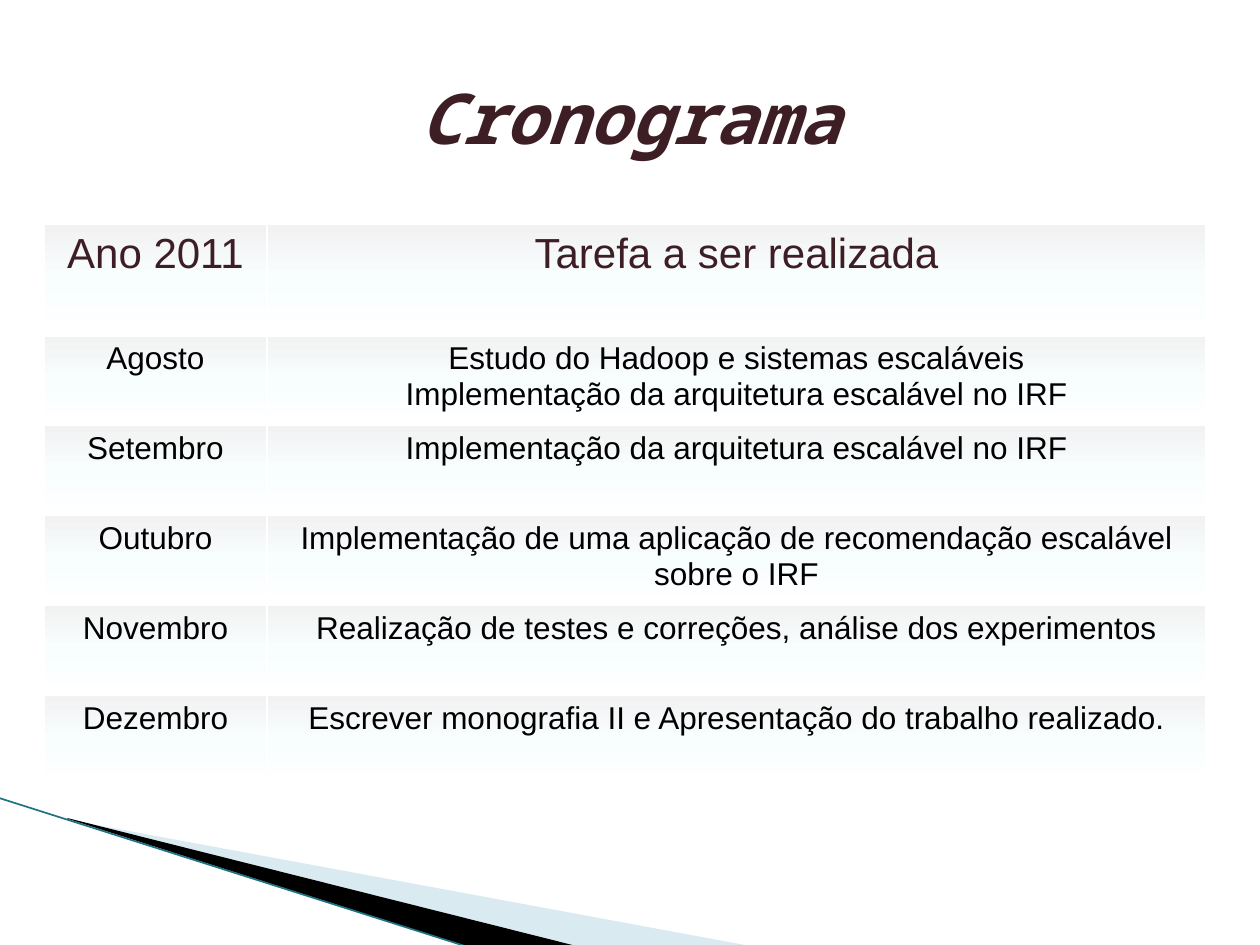
from lxml import etree
from pptx import Presentation
from pptx import util as u
from pptx.dml.color import RGBColor
from pptx.enum import shapes, text
from pptx.oxml import parse_xml
from pptx.oxml.ns import nsdecls, qn

PX = 914400 / 126
BLACK = RGBColor(0x00, 0x00, 0x00)
PLUM = RGBColor(0x3E, 0x1E, 0x25)
PALE_BLUE = RGBColor(0xA0, 0xCB, 0xDC)
TEAL = RGBColor(0x1F, 0x71, 0x86)
WHITE = RGBColor(0xFF, 0xFF, 0xFF)
CELL_STOPS = [
    (0, RGBColor(0xF2, 0xF2, 0xF2)),
    (50, RGBColor(0xF8, 0xFD, 0xFE)),
    (100, WHITE),
]


def px(*lengths):
    return [round(length * PX) for length in lengths]


def write(paragraph, content, **font_format):
    paragraph.alignment = text.PP_ALIGN.CENTER
    run = paragraph.add_run()
    run.text = content
    run.font.color.rgb = font_format.pop("color")
    for name, value in font_format.items():
        setattr(run.font, name, value)


prs = Presentation()
prs.slide_width, prs.slide_height = px(1260, 945)
slide = prs.slides.add_slide(prs.slide_layouts[5])

# Corner wedges: each outline reaches beyond its frame
wedges = [
    ([(69, 820), (750, 946), (575, 946), (69, 819)],
     (98, 689, 524, 199), PALE_BLUE),
    ([(67, 818), (576, 946), (469, 947), (68, 819)],
     (-8, 798, 524, 116), BLACK),
]
for points, frame, color in wedges:
    builder = slide.shapes.build_freeform(*points[0], scale=PX)
    builder.add_line_segments(points[1:], close=True)
    wedge = builder.convert_to_shape()
    wedge.left, wedge.top, wedge.width, wedge.height = px(*frame)
    outline = wedge._element.spPr.find(".//" + qn("a:path"))
    outline.set("w", str(frame[2]))
    outline.set("h", str(frame[3]))
    for point, (x, y) in zip(outline.iter(qn("a:pt")), points):
        point.set("x", str(x - frame[0]))
        point.set("y", str(y - frame[1]))
    wedge.shadow.inherit = False
    wedge.fill.solid()
    wedge.fill.fore_color.rgb = color
    wedge.line.fill.background()
    if color == PALE_BLUE:
        tint = wedge.fill._xPr.find(".//" + qn("a:srgbClr"))
        etree.SubElement(tint, qn("a:alpha"), val="40000")

# Corner edge
edge = slide.shapes.add_connector(
    shapes.MSO_CONNECTOR.STRAIGHT, *px(-1, 798, 468, 947))
edge.line.color.rgb = TEAL
edge.line.width = u.Pt(0.95)
etree.SubElement(edge._element.spPr, qn("a:effectLst"))

# Title
title = slide.shapes.title
title.left, title.top, title.width, title.height = px(63, 38, 1134, 157)
title.text_frame.vertical_anchor = text.MSO_ANCHOR.MIDDLE
write(title.text_frame.paragraphs[0], "Cronograma", name="Noto Sans Mono",
      size=u.Pt(40), bold=True, italic=True, color=PLUM)

# Schedule
schedule = [
    ("Ano 2011", ["Tarefa a ser realizada"]),
    ("Agosto", ["Estudo do Hadoop e sistemas escaláveis",
                "Implementação da arquitetura escalável no IRF"]),
    ("Setembro", ["Implementação da arquitetura escalável no IRF"]),
    ("Outubro", ["Implementação de uma aplicação de recomendação escalável "
                 "sobre o IRF"]),
    ("Novembro", ["Realização de testes e correções, análise dos experimentos"]),
    ("Dezembro", ["Escrever monografia II e Apresentação do trabalho realizado."]),
]
table = slide.shapes.add_table(
    len(schedule), 2, *px(44, 224, 1162, 561)).table
table.columns[0].width, table.columns[1].width = px(223, 939)
stops = "".join(
    f'<a:gs pos="{position * 1000}"><a:srgbClr val="{color}"/></a:gs>'
    for position, color in CELL_STOPS)

for row, (month, tasks) in enumerate(schedule):
    header = row == 0
    table.rows[row].height = px(111 if header else 90)[0]
    for column, lines in enumerate([[month], tasks]):
        cell = table.cell(row, column)
        body = cell.text_frame
        for i, line in enumerate(lines):
            paragraph = body.add_paragraph() if i else body.paragraphs[0]
            write(paragraph, line, name="Arial", bold=False,
                  size=u.Pt(24 if header else 18),
                  color=PLUM if header else BLACK)

        # Borders come before the fill in the cell properties
        properties = cell._tc.get_or_add_tcPr()
        for side in ("L", "R", "T", "B"):
            width = u.Pt(3 if header and side == "B" else 1)
            properties.append(parse_xml(
                f'<a:ln{side} {nsdecls("a")} w="{width}"><a:solidFill>'
                f'<a:srgbClr val="{WHITE}"/></a:solidFill></a:ln{side}>'))
        properties.append(parse_xml(
            f'<a:gradFill {nsdecls("a")}><a:gsLst>{stops}</a:gsLst>'
            '<a:lin ang="5400000" scaled="0"/></a:gradFill>'))

prs.save("out.pptx")
